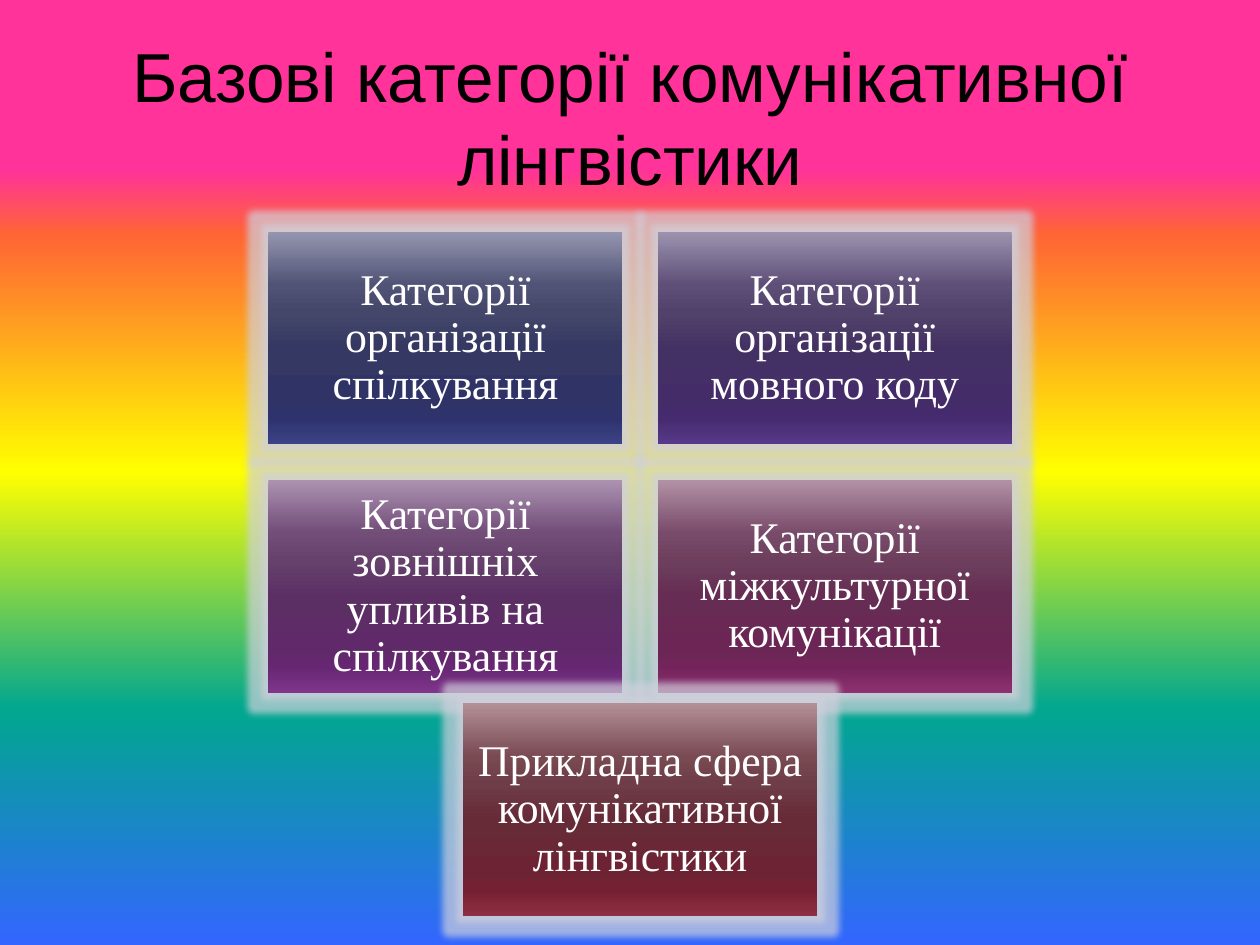
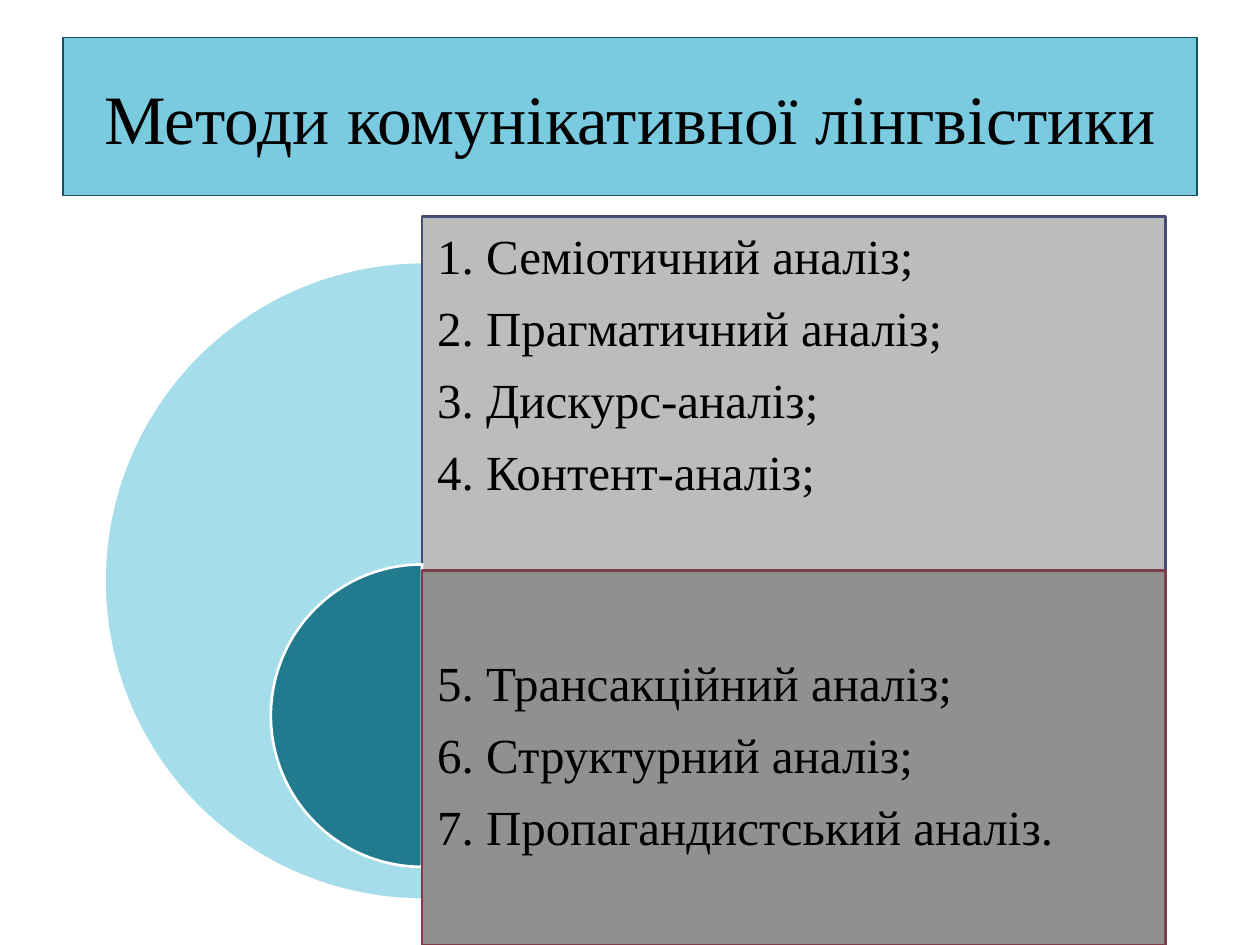
from lxml import etree
from pptx import Presentation
from pptx.dml.color import RGBColor
from pptx.enum.shapes import MSO_SHAPE
from pptx.enum.text import MSO_ANCHOR, PP_ALIGN
from pptx.oxml.ns import qn
from pptx.util import Inches, Pt

RECT, PIE = MSO_SHAPE.RECTANGLE, MSO_SHAPE.PIE
TOP, MIDDLE = MSO_ANCHOR.TOP, MSO_ANCHOR.MIDDLE
CENTER, JUSTIFY = PP_ALIGN.CENTER, PP_ALIGN.JUSTIFY

WIDTH, HEIGHT = Inches(10), Inches(7.5)
SANS, SERIF = "Arial", "Times New Roman"
BLACK, WHITE = "000000", "FFFFFF"
TITLE_AREA = (5, 4, 90, 16.67)

RAINBOW = [(18, "FF3399"), (25, "FF6633"), (50, "FFFF00"), (75, "01A78F"), (100, "3366FF")]

CARD_STOPS = (0, 25, 38, 55, 80, 88, 100)
CARD_SIZE = (28.1, 22.5)
CARD_ORIGIN = (21.3, 24.53)
CARD_STEP = (30.9, 26.27)
# column, row, wording, gradient colours from top to bottom
CARDS = [
    (0, 0, "Категорії організації спілкування",
     "9496B0 515376 44476A 343862 2F3366 2E336E 3C4286"),
    (1, 0, "Категорії організації мовного коду",
     "9D93B0 5D4F77 51426B 443163 432C68 462B70 573989"),
    (0, 1, "Категорії зовнішніх упливів на спілкування",
     "AC92B1 714D78 65416C 5C2F64 602969 672772 7E358B"),
    (1, 1, "Категорії міжкультурної комунікації",
     "B291A5 794B6A 6D3F5D 662C53 6B2655 74245B 8D3170"),
    (0.5, 1.9, "Прикладна сфера комунікативної лінгвістики",
     "B39096 7A4A53 6E3D47 672A37 6D2333 762133 8F2E42"),
]

PANEL_LEFT, PANEL_WIDTH = 33.5, 59
FIRST_METHODS = ["1. Семіотичний аналіз;", "2. Прагматичний аналіз;",
                 "3. Дискурс-аналіз;", "4. Контент-аналіз;"]
LAST_METHODS = ["5. Трансакційний аналіз;", "6. Структурний аналіз;",
                "7. Пропагандистський аналіз."]


def rgb(color):
    return RGBColor.from_string(color)


def apply(target, formats):
    for name, value in formats.items():
        setattr(target, name, value)


def add_color(parent, tag, color, alpha=None, **attributes):
    """Append an element holding a colour, opaque unless alpha (percent) is given."""
    holder = etree.SubElement(parent, qn(tag), **attributes)
    value = etree.SubElement(holder, qn("a:srgbClr"), val=color)
    if alpha is not None:
        etree.SubElement(value, qn("a:alpha"), val=str(alpha * 1000))


def set_gradient(fill, owner, stops):
    """Fill from top to bottom with (percent, colour) stops."""
    fill.gradient()
    fill.gradient_angle = 270
    stop_list = owner.xpath(".//a:gsLst")[0]
    for old_stop in list(stop_list):
        stop_list.remove(old_stop)
    for percent, color in stops:
        add_color(stop_list, "a:gs", color, pos=str(percent * 1000))


def add_figure(slide, kind, area, fill=None, line=None, line_width=1.5):
    """Add a shape; area is left, top, width, height in percent of the slide."""
    left, top, width, height = area
    figure = slide.shapes.add_shape(
        kind, round(WIDTH * left / 100), round(HEIGHT * top / 100),
        round(WIDTH * width / 100), round(HEIGHT * height / 100))
    figure.shadow.inherit = False
    if fill:
        figure.fill.solid()
        figure.fill.fore_color.rgb = rgb(fill)
    else:
        figure.fill.background()
    if line:
        figure.line.color.rgb = rgb(line)
        figure.line.width = Pt(line_width)
    else:
        figure.line.fill.background()
    return figure


def write(figure, lines, font, size, color, align=CENTER, anchor=MIDDLE,
          inset=None, spacing=1.0, after=0):
    frame = figure.text_frame
    apply(frame, {"word_wrap": True, "vertical_anchor": anchor})
    if inset is not None:
        apply(frame, {f"margin_{side}": Inches(inset)
                      for side in ("left", "top", "right", "bottom")})
    for index, line in enumerate(lines):
        paragraph = frame.add_paragraph() if index else frame.paragraphs[0]
        paragraph.text = line
        apply(paragraph, {"alignment": align, "line_spacing": spacing,
                          "space_after": Pt(after)})
        apply(paragraph.font, {"name": font, "size": Pt(size)})
        paragraph.font.color.rgb = rgb(color)


def add_title(slide, text, font, fill=None, line=None):
    band = add_figure(slide, RECT, TITLE_AREA, fill, line, 0.75)
    write(band, [text], font, 39.6, BLACK)


def add_card(slide, column, row, text, colors):
    left, top = (start + step * place for start, step, place
                 in zip(CARD_ORIGIN, CARD_STEP, (column, row)))
    card = add_figure(slide, RECT, (left, top, *CARD_SIZE))
    set_gradient(card.fill, card.element, zip(CARD_STOPS, colors.split()))
    effects = card.element.spPr.find(qn("a:effectLst"))
    add_color(effects, "a:glow", "D0D0DC", 70, rad=str(Pt(8)))
    write(card, [text], SERIF, 25, WHITE, inset=0.1, spacing=0.9)


def add_half_disc(slide, area, fill):
    disc = add_figure(slide, PIE, area, fill, WHITE)
    disc.adjustments[0], disc.adjustments[1] = 54, 162


def add_panel(slide, top, methods, fill, line, anchor, alpha=None):
    """Add a list panel that reaches down to the slide's bottom edge."""
    panel = add_figure(slide, RECT, (PANEL_LEFT, top, PANEL_WIDTH, 100 - top), fill, line)
    if alpha:
        color = panel.element.spPr.find(qn("a:solidFill"))[0]
        etree.SubElement(color, qn("a:alpha"), val=str(alpha * 1000))
    write(panel, methods, SERIF, 28, BLACK, JUSTIFY, anchor, 0.12, 0.9, 11)


def build_categories(slide):
    set_gradient(slide.background.fill, slide.element, RAINBOW)
    add_title(slide, "Базові категорії комунікативної лінгвістики", SANS)
    for card in CARDS:
        add_card(slide, *card)


def build_methods(slide):
    add_title(slide, "Методи комунікативної лінгвістики", SERIF, "7ACBE0", "175160")
    add_half_disc(slide, (8.3, 27.73, 50.6, 67.47), "A6DDEA")
    add_panel(slide, 22.93, FIRST_METHODS, "B5B5B5", "474B78", TOP, alpha=90)
    add_half_disc(slide, (21.5, 59.73, 24, 32), "227A8F")
    add_panel(slide, 60.4, LAST_METHODS, "909090", "7D3C4A", MIDDLE)


def main():
    deck = Presentation()
    apply(deck, {"slide_width": WIDTH, "slide_height": HEIGHT})
    blank = deck.slide_layouts[6]
    for build in (build_categories, build_methods):
        build(deck.slides.add_slide(blank))
    deck.save("out.pptx")


if __name__ == "__main__":
    main()
